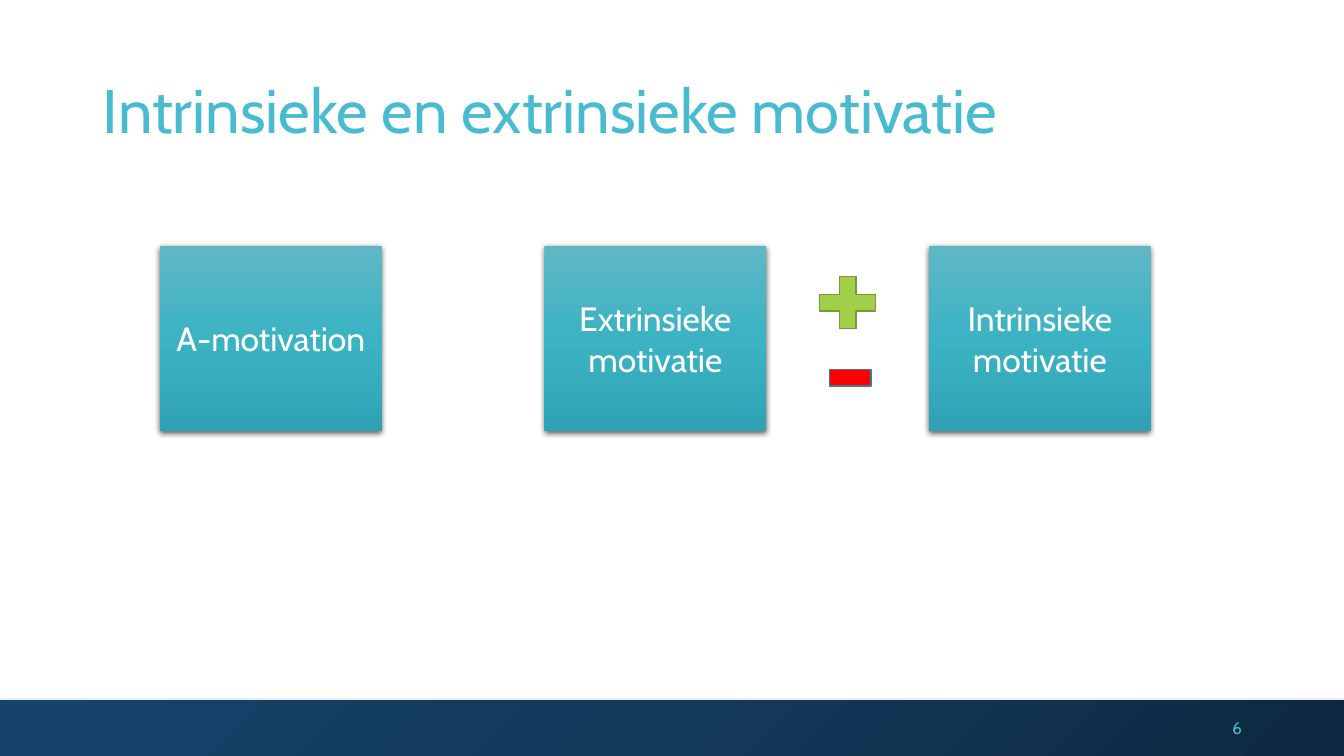
from dataclasses import dataclass

from lxml import etree
from pptx import Presentation
from pptx.dml.color import RGBColor
from pptx.enum.shapes import MSO_SHAPE
from pptx.enum.text import MSO_ANCHOR, MSO_AUTO_SIZE, PP_ALIGN
from pptx.oxml import parse_xml
from pptx.oxml.ns import nsdecls, qn
from pptx.util import Cm, Pt

RECTANGLE, PLUS, MINUS = MSO_SHAPE.RECTANGLE, MSO_SHAPE.MATH_PLUS, MSO_SHAPE.MATH_MINUS
LEFT, CENTER, RIGHT = PP_ALIGN.LEFT, PP_ALIGN.CENTER, PP_ALIGN.RIGHT
MIDDLE = MSO_ANCHOR.MIDDLE
NO_AUTOFIT = MSO_AUTO_SIZE.NONE


@dataclass(frozen=True)
class Theme:
    font: str = "Cabin"
    accent: str = "49BBD1"
    white: str = "FFFFFF"
    band: tuple = ("0D2840", "13395B", "16436C")
    card: tuple = ("5FB7C5", "3BB3C3", "2FA3B3")
    plus: tuple = ("A2CF49", "789936")
    minus: tuple = ("FF0000", "30818C")
    title_size: int = 44
    card_size: int = 24
    number_size: int = 12


theme = Theme()


def write(shape, text, size, color, alignment):
    frame = shape.text_frame
    frame.text = text
    frame.word_wrap = True
    frame.auto_size = NO_AUTOFIT
    frame.vertical_anchor = MIDDLE
    paragraph = frame.paragraphs[0]
    paragraph.alignment = alignment
    font = paragraph.runs[0].font
    font.name = theme.font
    font.size = Pt(size)
    font.color.rgb = RGBColor.from_string(color)


def add_gradient_box(left, top, width, height, colors, angle):
    """Add a borderless rectangle with a three-stop gradient and a soft shadow below."""
    shape = page.shapes.add_shape(RECTANGLE, left, top, width, height)
    shape.line.fill.background()
    shape.shadow.inherit = False
    stops = "".join(
        f'<a:gs pos="{index * 50000}"><a:srgbClr val="{color}"/></a:gs>'
        for index, color in enumerate(colors)
    )
    properties = shape._element.spPr
    properties.find(qn("a:prstGeom")).addnext(parse_xml(
        f'<a:gradFill {nsdecls("a")} rotWithShape="1"><a:gsLst>{stops}</a:gsLst>'
        f'<a:lin ang="{angle * 60000}" scaled="0"/></a:gradFill>'
    ))
    shadow = etree.SubElement(
        properties.find(qn("a:effectLst")), qn("a:outerShdw"),
        blurRad=str(Pt(4.5)), dist=str(Pt(1.5)), dir="5400000", rotWithShape="0",
    )
    shadow_color = etree.SubElement(shadow, qn("a:srgbClr"), val="000000")
    etree.SubElement(shadow_color, qn("a:alpha"), val="63000")
    return shape


deck = Presentation()
deck.slide_width, deck.slide_height = Cm(33.87), Cm(19.05)
page = deck.slides.add_slide(deck.slide_layouts[5])

# Footer band and page number
add_gradient_box(0, Cm(17.65), deck.slide_width, Cm(1.4), theme.band, 225)
number = page.shapes.add_textbox(Cm(23.93), Cm(17.83), Cm(7.62), Cm(1.02))
write(number, "6", theme.number_size, theme.accent, RIGHT)

# Title
title = page.shapes.title
title.left, title.top, title.width, title.height = Cm(2.34), Cm(1.02), Cm(30.84), Cm(3.68)
write(title, "Intrinsieke en extrinsieke motivatie", theme.title_size, theme.accent, LEFT)
title.text_frame.paragraphs[0].line_spacing = 0.9

# Motivation cards at an equal pitch
CARD_LEFT, CARD_PITCH = 4.03, 9.69
labels = ("A-motivation", "Extrinsieke motivatie", "Intrinsieke motivatie")
for index, label in enumerate(labels):
    card = add_gradient_box(
        Cm(CARD_LEFT + index * CARD_PITCH), Cm(6.2), Cm(5.59), Cm(4.66), theme.card, 90
    )
    write(card, label, theme.card_size, theme.white, CENTER)

# Plus and minus signs between the last two cards
signs = (
    (PLUS, 20.4, 6.74, 1.92, theme.plus),
    (MINUS, 20.72, 8.63, 1.42, theme.minus),
)
for kind, left, top, width, (fill, outline) in signs:
    sign = page.shapes.add_shape(kind, Cm(left), Cm(top), Cm(width), Cm(1.78))
    sign.shadow.inherit = False
    sign.fill.solid()
    sign.fill.fore_color.rgb = RGBColor.from_string(fill)
    sign.line.color.rgb = RGBColor.from_string(outline)
    sign.line.width = Pt(1)

deck.save("out.pptx")
